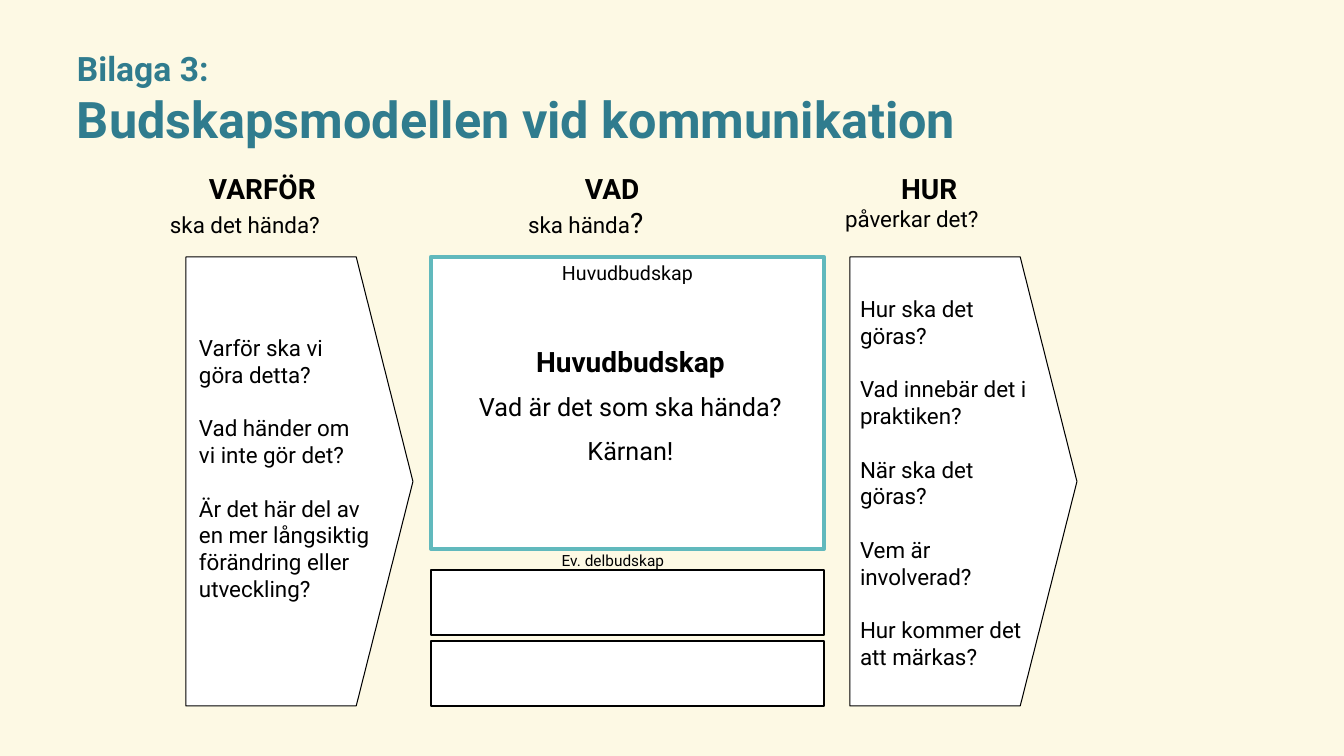
"""Build the message model slide: why, what and how columns under a title."""
import pptx
import pptx.dml.color
import pptx.enum.shapes
import pptx.enum.text
import pptx.util

PX = 914400 / 100.8
CREAM = pptx.dml.color.RGBColor(0xFD, 0xF9, 0xE4)
WHITE = pptx.dml.color.RGBColor(0xFF, 0xFF, 0xFF)
BLACK = pptx.dml.color.RGBColor(0x00, 0x00, 0x00)
TEAL = pptx.dml.color.RGBColor(0x30, 0x7C, 0x8E)
AQUA = pptx.dml.color.RGBColor(0x61, 0xB9, 0xBD)
RECTANGLE = pptx.enum.shapes.MSO_SHAPE.RECTANGLE
PENTAGON = pptx.enum.shapes.MSO_SHAPE.PENTAGON
LEFT = pptx.enum.text.PP_ALIGN.LEFT
CENTER = pptx.enum.text.PP_ALIGN.CENTER

presentation = pptx.Presentation()
presentation.slide_width = round(1344 * PX)
presentation.slide_height = round(756 * PX)
slide = presentation.slides.add_slide(presentation.slide_layouts[6])
slide.background.fill.solid()
slide.background.fill.fore_color.rgb = CREAM


def add_panel(kind, bounds, line_color, line_width):
    panel = slide.shapes.add_shape(kind, *[round(n * PX) for n in bounds])
    panel.shadow.inherit = False
    panel.fill.solid()
    panel.fill.fore_color.rgb = WHITE
    panel.line.color.rgb = line_color
    panel.line.width = pptx.util.Pt(line_width)
    return panel


def add_text(bounds, lines, inset=(0, 0), align=LEFT, color=BLACK):
    frame = slide.shapes.add_textbox(*[round(n * PX) for n in bounds]).text_frame
    frame.word_wrap = True
    frame.margin_left = frame.margin_right = round(inset[0] * PX)
    frame.margin_top = frame.margin_bottom = round(inset[1] * PX)
    for index, (text, size, bold, before) in enumerate(lines):
        paragraph = frame.add_paragraph() if index else frame.paragraphs[0]
        paragraph.text = text
        paragraph.alignment = align
        paragraph.space_before = pptx.util.Pt(before)
        paragraph.font.name = "Roboto"
        paragraph.font.size = pptx.util.Pt(size)
        paragraph.font.bold = bold
        paragraph.font.color.rgb = color
    return frame


add_text((67, 48, 1210, 100), [
    ("Bilaga 3:", 24, True, 0),
    ("Budskapsmodellen vid kommunikation", 36, True, 0),
], inset=(10, 0), color=TEAL)

for left, width, heading, indent, subheading, before in [
    (160, 212, "VARFÖR", 39, "ska det hända?", 4),
    (518, 196, "VAD", 57, "ska hända", 0),
    (835, 196, "HUR", 56, "påverkar det?", 0),
]:
    column = add_text((left, 167, width, 85), [
        (heading, 20, True, 0),
        (subheading, 16, False, before),
    ], inset=(10, 5))
    column.paragraphs[0]._p.get_or_add_pPr().set("marL", str(round(indent * PX)))
    if heading == "VAD":
        question_mark = column.paragraphs[1].add_run()
        question_mark.text = "?"
        question_mark.font.size = pptx.util.Pt(20)

for left in (186, 850):
    arrow = add_panel(PENTAGON, (left, 257, 227, 449), BLACK, 0.75)
    arrow.adjustments[0] = 0.25

add_panel(RECTANGLE, (431, 257, 393, 292), AQUA, 3)
for top in (570, 641):
    add_panel(RECTANGLE, (431, top, 393, 65), BLACK, 1.5)

add_text((455, 261, 345, 23), [("Huvudbudskap", 14, False, 0)], align=CENTER)
add_text((458, 345, 345, 122), [
    ("Huvudbudskap", 20, True, 0),
    ("Vad är det som ska hända?", 18, False, 9),
    ("Kärnan!", 18, False, 10),
], align=CENTER)
submessage = add_text((449, 555, 328, 14), [("Ev. delbudskap", 11, False, 0)], align=CENTER)
submessage.paragraphs[0].line_spacing = 0.8

why_questions = [
    "Varför ska vi göra detta?",
    "Vad händer om vi inte gör det?",
    "Är det här del av en mer långsiktig förändring eller utveckling?",
]
how_questions = [
    "Hur ska det göras?",
    "Vad innebär det i praktiken?",
    "När ska det göras?",
    "Vem är involverad?",
    "Hur kommer det att märkas?",
]
for bounds, inset, questions in [
    ((199, 334, 171, 256), (0, 0), why_questions),
    ((850, 290, 201, 381), (10, 5), how_questions),
]:
    add_text(bounds, [
        (question, 16, False, 19 if index else 0)
        for index, question in enumerate(questions)
    ], inset=inset)

presentation.save("out.pptx")
